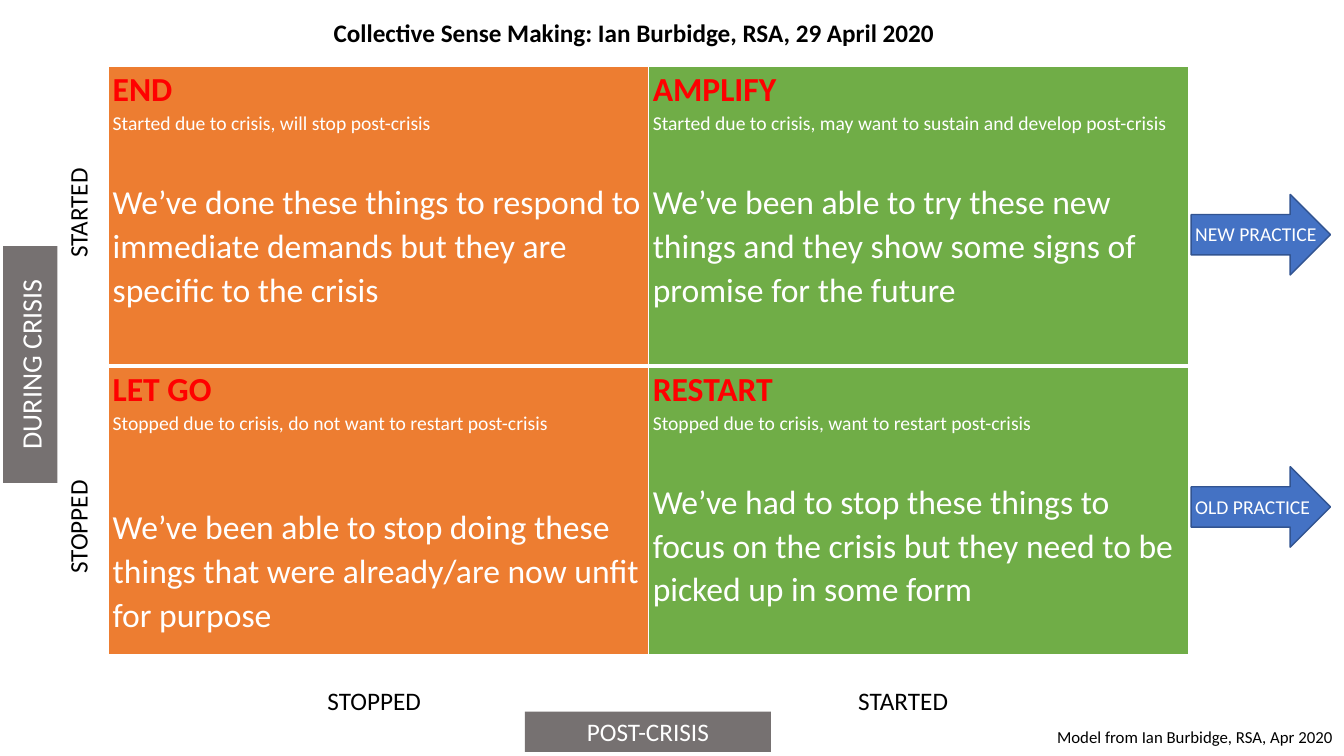
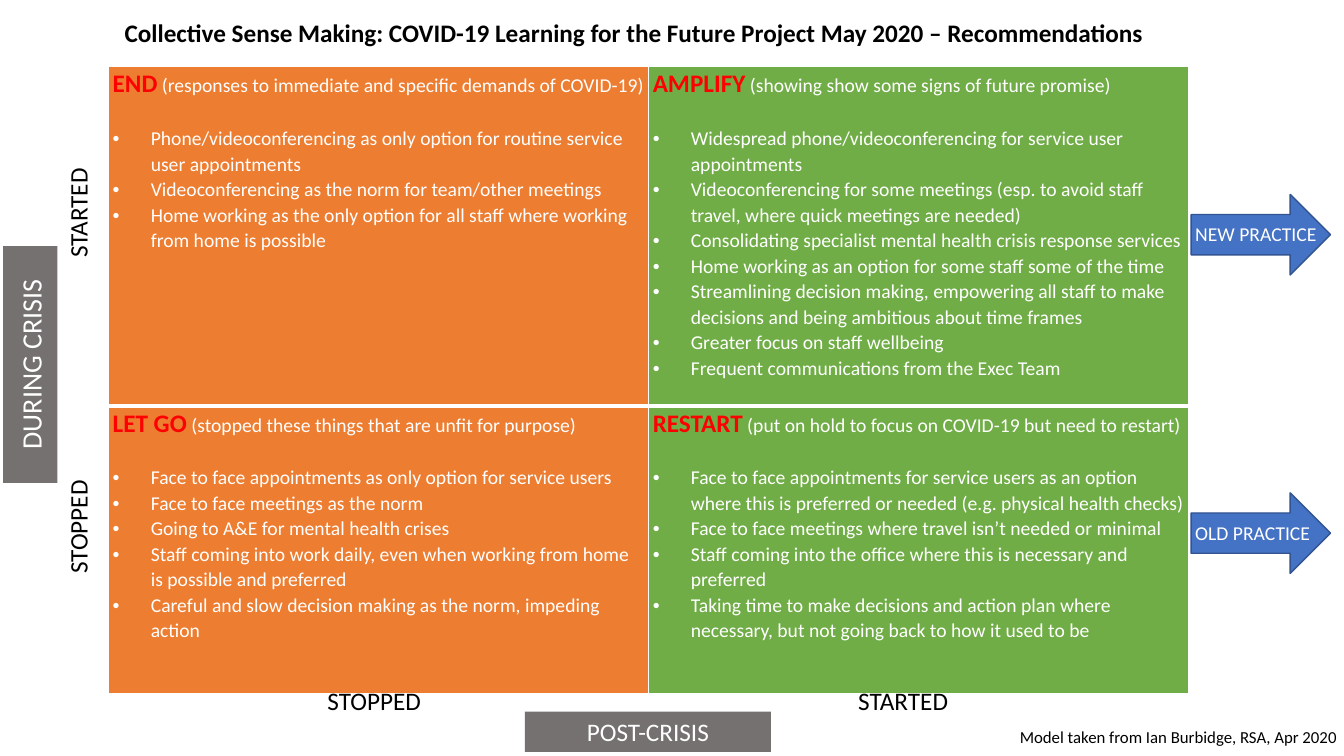
from dataclasses import dataclass

from pptx import Presentation
from pptx.dml.color import RGBColor as Rgb
from pptx.enum.shapes import MSO_SHAPE as Shape
from pptx.enum.text import MSO_ANCHOR as Anchor, PP_ALIGN as Align
from pptx.oxml import parse_xml
from pptx.oxml.ns import nsdecls
from pptx.util import Cm, Pt


@dataclass(frozen=True)
class Theme:
    """Colours, font and type sizes shared by both slides."""
    font: str = "Calibri"
    black: str = "000000"
    white: str = "FFFFFF"
    heading: str = "FF0000"
    band: str = "767171"
    arrow: str = "4472C4"
    arrow_edge: str = "325491"
    columns: tuple = ("ED7D31", "70AD47")
    huge: int = 24
    large: int = 20
    medium: int = 18
    small: int = 14
    tiny: int = 12
    spacing: float = 1.07


@dataclass(frozen=True)
class Quadrant:
    heading: str
    note: str
    items: tuple
    gap: float


@dataclass(frozen=True)
class Matrix:
    title: str
    credit: str
    credit_left: float
    top_row: float
    old_practice_top: float
    fill_quadrant: object
    quadrants: tuple


THEME = Theme()
SLIDE_WIDTH, SLIDE_HEIGHT = 33.87, 19.05
TABLE_LEFT, TABLE_TOP, COLUMN_WIDTH, BOTTOM_ROW = 2.74, 1.68, 13.61, 7.26
HANGING = 0.96
LINE_GAP = 18.3    # points left free by one small line
LARGE_GAP = 31.3   # points left free by one huge line


# Text

def add_run(paragraph, text, size, color, bold=False):
    run = paragraph.add_run()
    run.text = text
    font = run.font
    font.name, font.size, font.bold = THEME.font, Pt(size), bold
    font.color.rgb = Rgb.from_string(color)


def fill_text(shape, text, size, color, align, bold=False, vertical=False):
    frame = shape.text_frame
    frame.word_wrap = True
    if vertical:
        frame._txBody.bodyPr.set("vert", "vert270")
    paragraph = frame.paragraphs[0]
    paragraph.alignment = align
    add_run(paragraph, text, size, color, bold)
    return frame


def add_label(slide, box, text, size, color=THEME.black, align=Align.LEFT, **style):
    label = slide.shapes.add_textbox(*map(Cm, box))
    return fill_text(label, text, size, color, align, **style)


# Shapes

def add_solid(slide, kind, box, color, edge=None):
    solid = slide.shapes.add_shape(kind, *map(Cm, box))
    solid.shadow.inherit = False
    solid.fill.solid()
    solid.fill.fore_color.rgb = Rgb.from_string(color)
    if edge:
        solid.line.color.rgb = Rgb.from_string(edge)
        solid.line.width = Pt(1)
    else:
        solid.line.fill.background()
    return solid


def add_band(slide, box, text, size, vertical=False):
    band = add_solid(slide, Shape.RECTANGLE, box, THEME.band)
    frame = fill_text(band, text, size, THEME.white, Align.CENTER, vertical=vertical)
    frame.vertical_anchor = Anchor.MIDDLE


def add_practice_arrow(slide, top, text):
    add_solid(slide, Shape.RIGHT_ARROW, (30.02, top, 3.51, 2.03),
              THEME.arrow, THEME.arrow_edge)
    add_label(slide, (29.87, top + 0.58, 3.84, 0.86), text, THEME.small, THEME.white)


# Table cells

def next_paragraph(frame, first=False, gap=0):
    paragraph = frame.paragraphs[0] if first else frame.add_paragraph()
    paragraph.line_spacing = THEME.spacing
    if gap:
        paragraph.space_before = Pt(gap)
    return paragraph


def add_bullet(paragraph):
    properties = paragraph._p.get_or_add_pPr()
    properties.set("marL", str(Cm(HANGING)))
    properties.set("indent", str(-Cm(HANGING)))
    for tag, key, value in (("buFont", "typeface", "Arial"), ("buChar", "char", "•")):
        properties.append(parse_xml(f'<a:{tag} {nsdecls("a")} {key}="{value}"/>'))


def fill_statement(frame, quadrant):
    add_run(next_paragraph(frame, first=True), quadrant.heading,
            THEME.huge, THEME.heading, bold=True)
    add_run(next_paragraph(frame), quadrant.note, THEME.small, THEME.white)
    for item in quadrant.items:
        add_run(next_paragraph(frame, gap=quadrant.gap), item, THEME.huge, THEME.white)


def fill_list(frame, quadrant):
    opening = next_paragraph(frame, first=True)
    add_run(opening, quadrant.heading, THEME.medium, THEME.heading, bold=True)
    add_run(opening, f" {quadrant.note}", THEME.small, THEME.white)
    for index, item in enumerate(quadrant.items):
        paragraph = next_paragraph(frame, gap=0 if index else quadrant.gap)
        add_bullet(paragraph)
        add_run(paragraph, item, THEME.small, THEME.white)


def set_borders(cell, top, bottom):
    properties = cell._tc.get_or_add_tcPr()
    sides = (("lnL", 1), ("lnR", 1), ("lnT", top), ("lnB", bottom))
    for position, (side, width) in enumerate(sides):
        properties.insert(position, parse_xml(
            f'<a:{side} {nsdecls("a")} w="{Pt(width)}"><a:solidFill>'
            f'<a:srgbClr val="{THEME.white}"/></a:solidFill></a:{side}>'))


def add_quadrants(slide, matrix):
    heights = (matrix.top_row, BOTTOM_ROW)
    table = slide.shapes.add_table(
        2, 2, Cm(TABLE_LEFT), Cm(TABLE_TOP),
        Cm(2 * COLUMN_WIDTH), Cm(sum(heights))).table
    table.first_row = table.horz_banding = False
    for column in table.columns:
        column.width = Cm(COLUMN_WIDTH)
    for row, height in zip(table.rows, heights):
        row.height = Cm(height)
    for index, quadrant in enumerate(matrix.quadrants):
        row, column = divmod(index, 2)
        cell = table.cell(row, column)
        cell.margin_left = cell.margin_right = Cm(0.1)
        cell.margin_top = cell.margin_bottom = 0
        cell.fill.solid()
        cell.fill.fore_color.rgb = Rgb.from_string(THEME.columns[column])
        set_borders(cell, *((3, 1) if row else (1, 3)))
        matrix.fill_quadrant(cell.text_frame, quadrant)


# Parts shared by the slides

def add_axes(slide):
    add_band(slide, (0.08, 6.2, 1.37, 5.97), "DURING CRISIS", THEME.large, vertical=True)
    add_band(slide, (13.23, 17.93, 6.2, 1.02), "POST-CRISIS", THEME.medium)
    length = 4
    for text, middle in (("STARTED", 5.37), ("STOPPED", 13.28)):
        add_label(slide, (1.45, middle - length / 2, 1.27, length), text,
                  THEME.medium, align=Align.CENTER, vertical=True)
    for text, middle in (("STOPPED", 9.43), ("STARTED", 22.76)):
        add_label(slide, (middle - length / 2, 17.15, length, 1.02), text,
                  THEME.medium, align=Align.CENTER)


def add_matrix_slide(deck, matrix):
    slide = deck.slides.add_slide(deck.slide_layouts[6])
    add_quadrants(slide, matrix)
    add_axes(slide)
    add_practice_arrow(slide, 4.9, "NEW PRACTICE")
    add_practice_arrow(slide, matrix.old_practice_top, "OLD PRACTICE")
    add_label(slide, (0.97, 0.3, 30.02, 1.02), matrix.title, THEME.medium,
              align=Align.CENTER, bold=True)
    credit = add_label(
        slide, (matrix.credit_left, 18.19, SLIDE_WIDTH - matrix.credit_left, 0.76),
        matrix.credit, THEME.tiny)
    credit.margin_right = 0


# Content

MODEL = Matrix(
    "Collective Sense Making: Ian Burbidge, RSA, 29 April 2020",
    "Model from Ian Burbidge, RSA, Apr 2020",
    26.39, 7.55, 11.76, fill_statement,
    (
        Quadrant("END", "Started due to crisis, will stop post-crisis", (
            "We’ve done these things to respond to immediate demands but they are "
            "specific to the crisis",), LARGE_GAP),
        Quadrant("AMPLIFY",
                 "Started due to crisis, may want to sustain and develop post-crisis", (
                     "We’ve been able to try these new things and they show some signs "
                     "of promise for the future",), LARGE_GAP),
        Quadrant("LET GO", "Stopped due to crisis, do not want to restart post-crisis", (
            "We’ve been able to stop doing these things that were already/are now "
            "unfit for purpose",), LARGE_GAP + LINE_GAP),
        Quadrant("RESTART", "Stopped due to crisis, want to restart post-crisis", (
            "We’ve had to stop these things to focus on the crisis but they need to "
            "be picked up in some form",), LARGE_GAP),
    ))

RECOMMENDATIONS = Matrix(
    "Collective Sense Making: COVID-19 Learning for the Future Project May 2020 "
    "– Recommendations",
    "Model taken from Ian Burbidge, RSA, Apr 2020",
    25.45, 8.55, 12.42, fill_list,
    (
        Quadrant("END", "(responses to immediate and specific demands of COVID-19)", (
            "Phone/videoconferencing as only option for routine service user appointments",
            "Videoconferencing as the norm for team/other meetings",
            "Home working as the only option for all staff where working from home is "
            "possible",
        ), LINE_GAP),
        Quadrant("AMPLIFY", "(showing show some signs of future promise)", (
            "Widespread phone/videoconferencing for service user appointments",
            "Videoconferencing for some meetings (esp. to avoid staff travel, where "
            "quick meetings are needed)",
            "Consolidating specialist mental health crisis response services",
            "Home working as an option for some staff some of the time",
            "Streamlining decision making, empowering all staff to make decisions and "
            "being ambitious about time frames",
            "Greater focus on staff wellbeing",
            "Frequent communications from the Exec Team",
        ), LINE_GAP),
        Quadrant("LET GO", "(stopped these things that are unfit for purpose)", (
            "Face to face appointments as only option for service users",
            "Face to face meetings as the norm",
            "Going to A&E for mental health crises",
            "Staff coming into work daily, even when working from home is possible and "
            "preferred",
            "Careful and slow decision making as the norm, impeding action",
        ), LINE_GAP),
        Quadrant("RESTART", "(put on hold to focus on COVID-19 but need to restart)", (
            "Face to face appointments for service users as an option where this is "
            "preferred or needed (e.g. physical health checks)",
            "Face to face meetings where travel isn’t needed or minimal",
            "Staff coming into the office where this is necessary and preferred",
            "Taking time to make decisions and action plan where necessary, but not "
            "going back to how it used to be",
        ), LINE_GAP),
    ))


def main():
    deck = Presentation()
    deck.slide_width, deck.slide_height = Cm(SLIDE_WIDTH), Cm(SLIDE_HEIGHT)
    for matrix in (MODEL, RECOMMENDATIONS):
        add_matrix_slide(deck, matrix)
    deck.save("out.pptx")


if __name__ == "__main__":
    main()
